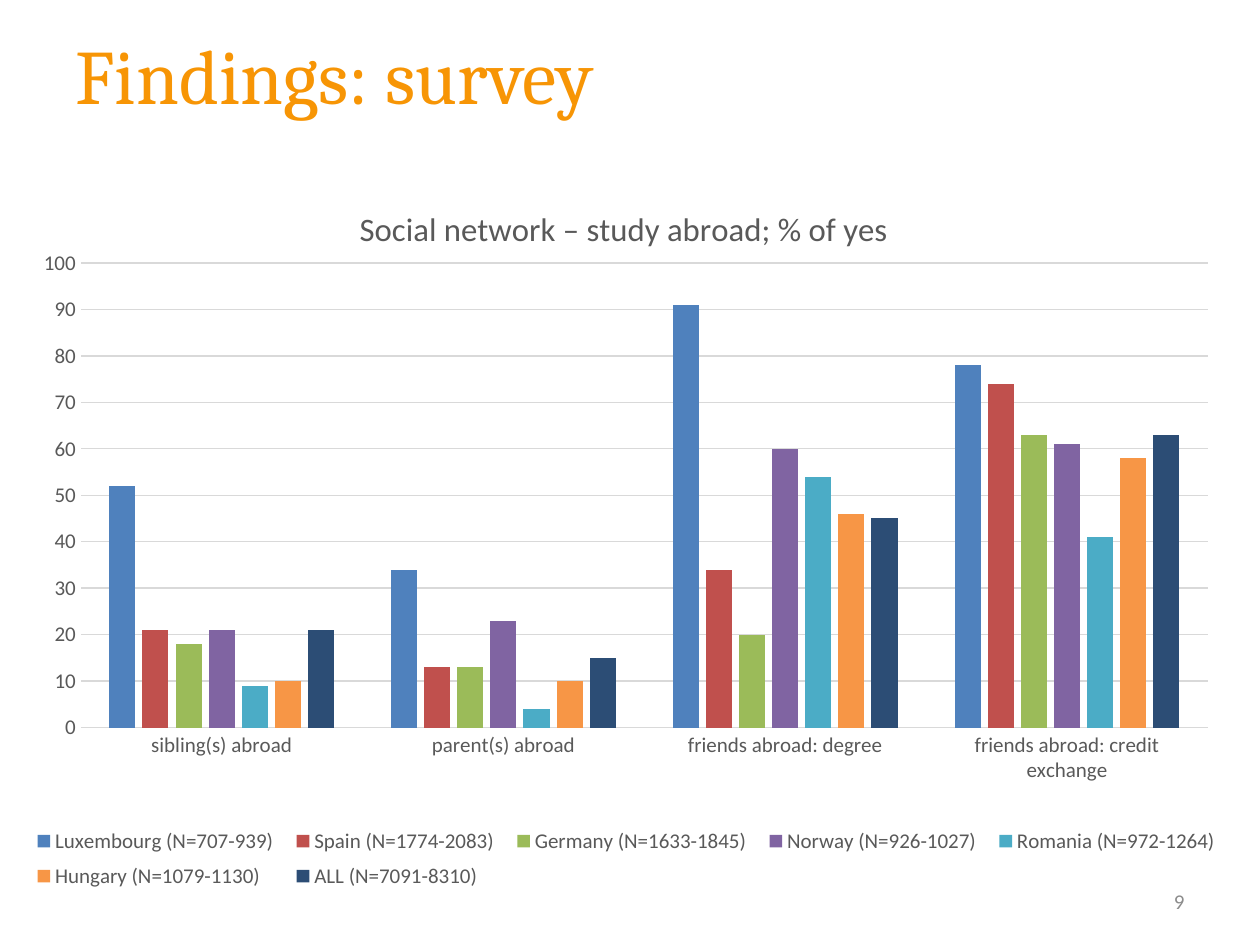
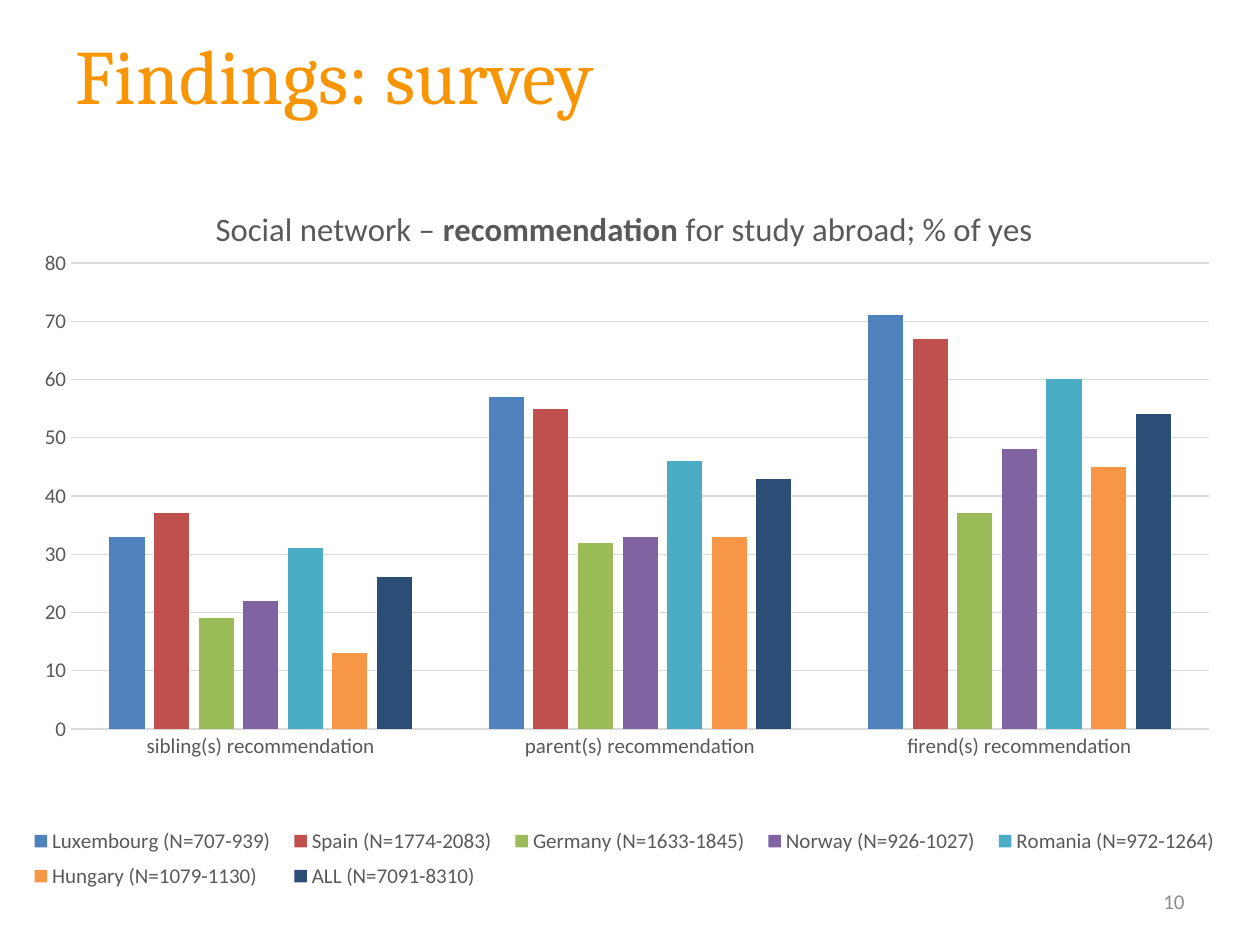
from lxml.etree import SubElement
from pptx import Presentation
from pptx.chart.data import CategoryChartData
from pptx.dml.color import RGBColor
from pptx.enum.chart import XL_CHART_TYPE, XL_LEGEND_POSITION, XL_TICK_MARK
from pptx.enum.text import MSO_ANCHOR, PP_ALIGN
from pptx.oxml.ns import qn
from pptx.util import Inches, Pt

# Shared colours and fonts
ORANGE = RGBColor(0xF7, 0x95, 0x05)
BLACK = RGBColor(0x00, 0x00, 0x00)
TEXT = RGBColor(0x59, 0x59, 0x59)
GRID = RGBColor(0xD9, 0xD9, 0xD9)
GREY = RGBColor(0x8C, 0x8C, 0x8C)
HEAD, BODY = "Cambria", "Calibri"

# Countries: legend name and bar colour
GROUPS = [
    ("Luxembourg (N=707-939)", RGBColor(0x4F, 0x81, 0xBD)),
    ("Spain (N=1774-2083)", RGBColor(0xC0, 0x50, 0x4D)),
    ("Germany (N=1633-1845)", RGBColor(0x9B, 0xBB, 0x59)),
    ("Norway (N=926-1027)", RGBColor(0x80, 0x64, 0xA2)),
    ("Romania (N=972-1264)", RGBColor(0x4B, 0xAC, 0xC6)),
    ("Hungary (N=1079-1130)", RGBColor(0xF7, 0x96, 0x46)),
    ("ALL (N=7091-8310)", RGBColor(0x2C, 0x4D, 0x75)),
]

# Boxes: left, top, width, height in inches
TITLE_BOX = (0.5, -0.04, 9.5, 1.25)
CHART_BOX = (0.14, 1.44, 9.63, 5.78)
PAGE_BOX = (7.17, 6.95, 2.33, 0.4)

# One entry per slide; rows hold one value per country,
# spot, plot and key place chart parts as fractions of the chart
SLIDES = [
    dict(
        page="9", top=100,
        title=[("Social network – study abroad; % of yes", False)],
        spot=(0.277, 0.026), plot=(0.052, 0.112, 0.929, 0.638),
        key=(0.003, 0.875, 0.997, 0.11),
        rows={
            "sibling(s) abroad": (52, 21, 18, 21, 9, 10, 21),
            "parent(s) abroad": (34, 13, 13, 23, 4, 10, 15),
            "friends abroad: degree": (91, 34, 20, 60, 54, 46, 45),
            "friends abroad: credit exchange": (78, 74, 63, 61, 41, 58, 63),
        },
    ),
    dict(
        page="10", top=80,
        title=[("Social network – ", False), ("recommendation", True),
               (" for study abroad; % of yes", False)],
        spot=(0.16, 0.03), plot=(0.044, 0.112, 0.938, 0.64),
        key=(0, 0.875, 1, 0.11),
        rows={
            "sibling(s) recommendation": (33, 37, 19, 22, 31, 13, 26),
            "parent(s) recommendation": (57, 55, 32, 33, 46, 33, 43),
            "firend(s) recommendation": (71, 67, 37, 48, 60, 45, 54),
        },
    ),
]


def inches(box):
    return [Inches(v) for v in box]


def style(font, name, size, color, bold=False):
    font.name, font.size, font.bold = name, Pt(size), bold
    font.color.rgb = color


def add_run(para, text, *look):
    run = para.add_run()
    run.text = text
    style(run.font, *look)


def set_line(line, color):
    line.color.rgb = color
    line.width = Pt(0.75)


def set_layout(node, index, box, **target):
    """Fix the place of a chart part, as fractions of the chart."""
    for old in node.findall(qn("c:layout")):
        node.remove(old)
    layout = SubElement(node, qn("c:layout"))
    node.insert(index, layout)
    manual = SubElement(layout, qn("c:manualLayout"))
    parts = dict(target, xMode="edge", yMode="edge", **dict(zip("xywh", box)))
    for tag, value in parts.items():
        SubElement(manual, qn("c:" + tag)).set("val", str(value))


def add_title(slide, box):
    shape = slide.shapes.title
    shape.left, shape.top, shape.width, shape.height = inches(box)
    frame = shape.text_frame
    frame.vertical_anchor = MSO_ANCHOR.MIDDLE
    para = frame.paragraphs[0]
    para.alignment = PP_ALIGN.LEFT
    add_run(para, "Findings: survey", HEAD, 44, ORANGE)


def add_page(slide, box, text):
    frame = slide.shapes.add_textbox(*inches(box)).text_frame
    frame.word_wrap = True
    frame.vertical_anchor = MSO_ANCHOR.MIDDLE
    para = frame.paragraphs[0]
    para.alignment = PP_ALIGN.RIGHT
    add_run(para, text, BODY, 12, GREY)


def style_axes(chart, top):
    cat, val = chart.category_axis, chart.value_axis
    for axis in (cat, val):
        axis.major_tick_mark = axis.minor_tick_mark = XL_TICK_MARK.NONE
        style(axis.tick_labels.font, BODY, 12, TEXT)
    set_line(cat.format.line, GRID)
    val.format.line.fill.background()
    val.has_major_gridlines = True
    set_line(val.major_gridlines.format.line, GRID)
    val.minimum_scale, val.maximum_scale, val.major_unit = 0, top, 10


def add_bars(slide, box, title, spot, plot, key, rows, top):
    data = CategoryChartData(number_format="0")
    data.categories = list(rows)
    for (name, _), values in zip(GROUPS, zip(*rows.values())):
        data.add_series(name, values)
    chart = slide.shapes.add_chart(
        XL_CHART_TYPE.COLUMN_CLUSTERED, *inches(box), data).chart
    style(chart.font, BODY, 10, BLACK)

    # Bars
    bars = chart.plots[0]
    bars.gap_width, bars.overlap = 219, -27
    bars.vary_by_categories = False
    for series, (_, color) in zip(bars.series, GROUPS):
        series.format.fill.solid()
        series.format.fill.fore_color.rgb = color
    style_axes(chart, top)

    # Chart title
    chart.has_title = True
    para = chart.chart_title.text_frame.paragraphs[0]
    for text, bold in title:
        add_run(para, text, BODY, 18.7, TEXT, bold)
    set_layout(chart.chart_title.element, 1, spot)

    # Legend
    chart.has_legend = True
    legend = chart.legend
    legend.position = XL_LEGEND_POSITION.BOTTOM
    legend.include_in_layout = False
    style(legend.font, BODY, 12, TEXT)
    set_layout(chart.element.find(".//" + qn("c:legend")), 1, key)

    # Plot area
    set_layout(chart.element.find(".//" + qn("c:plotArea")), 0, plot,
               layoutTarget="inner")


def add_slide(deck, page, **bars):
    slide = deck.slides.add_slide(deck.slide_layouts[5])
    add_title(slide, TITLE_BOX)
    add_bars(slide, CHART_BOX, **bars)
    add_page(slide, PAGE_BOX, page)


def main():
    deck = Presentation()
    deck.slide_width, deck.slide_height = Inches(10), Inches(7.5)
    for entry in SLIDES:
        add_slide(deck, **entry)
    deck.save("out.pptx")


if __name__ == "__main__":
    main()
